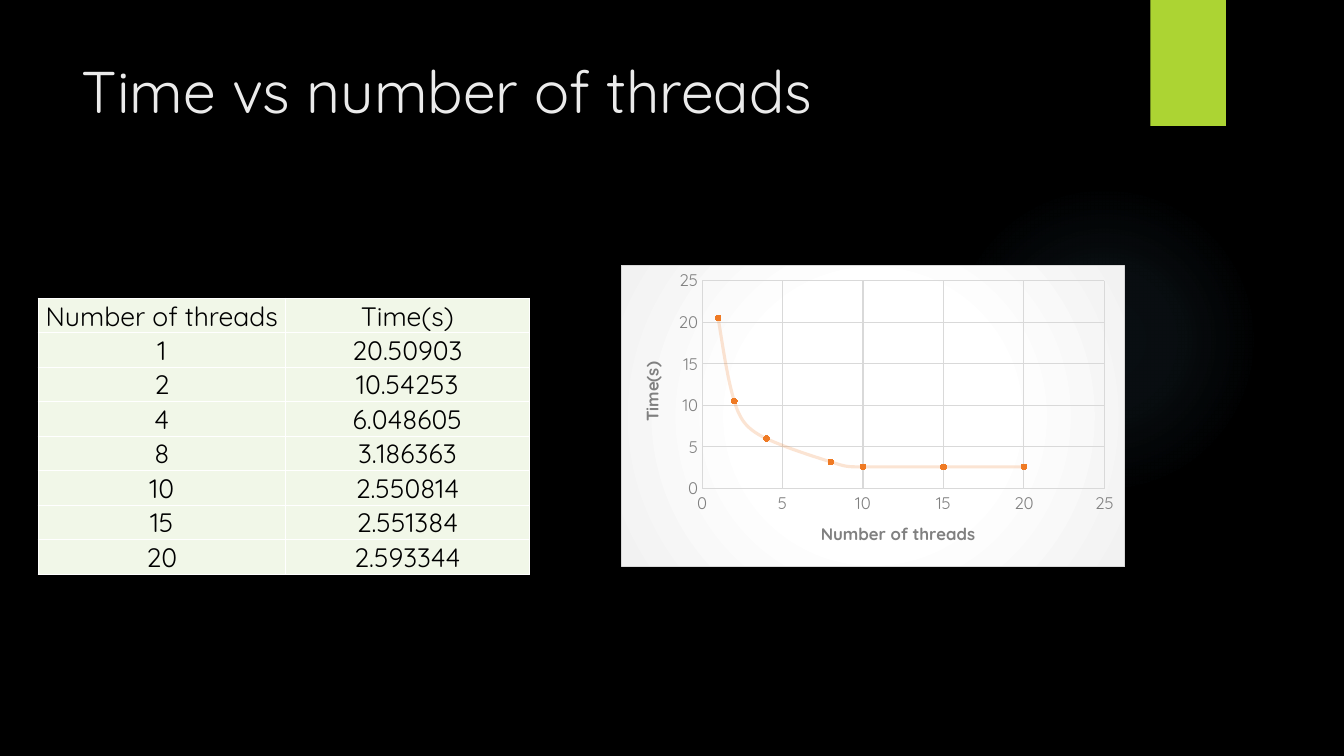
from lxml import etree
from pptx import Presentation
from pptx.chart.data import XyChartData
from pptx.dml.color import RGBColor
from pptx.enum.chart import XL_CHART_TYPE as CT, XL_MARKER_STYLE as MARKER, XL_TICK_MARK as TICK
from pptx.enum.shapes import MSO_SHAPE as SHAPE
from pptx.enum.text import MSO_ANCHOR as ANCHOR, PP_ALIGN as ALIGN
from pptx.oxml import parse_xml
from pptx.oxml.ns import nsdecls
from pptx.util import Inches, Pt

HEADERS = ("Number of threads", "Time(s)")
TIMINGS = [(1, 20.50903), (2, 10.54253), (4, 6.048605), (8, 3.186363),
           (10, 2.550814), (15, 2.551384), (20, 2.593344)]


def rgb(value):
    return RGBColor.from_string(value)


def radial(stops):
    gs = "".join(f'<a:gs pos="{pos * 1000}"><a:srgbClr val="{color}"><a:alpha val="{alpha * 1000}"/>'
                 "</a:srgbClr></a:gs>" for pos, color, alpha in stops)
    return parse_xml(f'<a:gradFill {nsdecls("a")} rotWithShape="1"><a:gsLst>{gs}</a:gsLst>'
                     '<a:path path="circle"><a:fillToRect l="50000" t="50000" r="50000" b="50000"/>'
                     "</a:path></a:gradFill>")


def place(parent, index, inner=False, **fractions):
    for old in parent.xpath("c:layout"):
        parent.remove(old)
    target = '<c:layoutTarget val="inner"/>' if inner else ""
    modes = '<c:xMode val="edge"/><c:yMode val="edge"/>'
    values = "".join(f'<c:{key} val="{value}"/>' for key, value in fractions.items())
    parent.insert(index, parse_xml(f'<c:layout {nsdecls("c")}><c:manualLayout>{target}{modes}{values}'
                                   "</c:manualLayout></c:layout>"))


class Deck:
    """Holds the slide and its style, and draws each kind of element."""

    font, accent, title_color = "Quicksand", "ACD433", "EBEBEB"
    cell_fill, cell_text, cell_border = "F1F7E8", "000000", "FFFFFF"
    grid, axis_text, series_color = "D9D9D9", "808080", "EF7A24"

    def __init__(self, prs):
        self.s = prs.slides.add_slide(prs.slide_layouts[5])
        self.s.background.fill.solid()
        self.s.background.fill.fore_color.rgb = rgb("000000")

    def style(self, font, size, color, bold=False):
        font.name, font.size, font.bold = self.font, Pt(size), bold
        font.color.rgb = rgb(color)

    def shape(self, kind, x, y, w, h, color=None, stops=None):
        sp = self.s.shapes.add_shape(kind, Inches(x), Inches(y), Inches(w), Inches(h))
        sp.shadow.inherit = False
        sp.line.fill.background()
        if stops:
            sp.fill.background()
            no_fill = sp.element.spPr.find("{*}noFill")
            sp.element.spPr.replace(no_fill, radial(stops))
        else:
            sp.fill.solid()
            sp.fill.fore_color.rgb = rgb(color)

    def title(self, text, x, y, w, h):
        sp = self.s.shapes.title
        sp.left, sp.top, sp.width, sp.height = Inches(x), Inches(y), Inches(w), Inches(h)
        tf = sp.text_frame
        tf.text, tf.vertical_anchor, tf.word_wrap = text, ANCHOR.TOP, True
        p = tf.paragraphs[0]
        p.alignment = ALIGN.LEFT
        self.style(p.font, 42, self.title_color)

    def table(self, rows, x, y, widths, height):
        table = self.s.shapes.add_table(len(rows), len(widths), Inches(x), Inches(y), Inches(sum(widths)),
                                        Inches(height)).table
        table.first_row = table.horz_banding = False
        for column, width in zip(table.columns, widths):
            column.width = Inches(width)
        for i, row in enumerate(rows):
            table.rows[i].height = Inches(height / len(rows))
            for j, value in enumerate(row):
                self.cell(table.cell(i, j), str(value))

    def cell(self, cell, text):
        cell.text, cell.vertical_anchor = text, ANCHOR.MIDDLE
        cell.margin_left = cell.margin_right = cell.margin_top = Inches(0.01)
        cell.margin_bottom = 0
        cell.fill.solid()
        cell.fill.fore_color.rgb = rgb(self.cell_fill)
        p = cell.text_frame.paragraphs[0]
        p.alignment = ALIGN.CENTER
        self.style(p.font, 19, self.cell_text)
        for i, side in enumerate("LRTB"):
            cell._tc.tcPr.insert(i, parse_xml(
                f'<a:ln{side} {nsdecls("a")} w="12700"><a:solidFill>'
                f'<a:srgbClr val="{self.cell_border}"/></a:solidFill></a:ln{side}>'))

    def axis(self, axis, title):
        axis.minimum_scale, axis.maximum_scale, axis.major_unit = 0, 25, 5
        axis.major_tick_mark = axis.minor_tick_mark = TICK.NONE
        axis.has_major_gridlines = True
        line = axis.major_gridlines.format.line
        line.color.rgb, line.width = rgb(self.grid), Pt(0.75)
        axis.format.line.fill.background()
        self.style(axis.tick_labels.font, 12, self.axis_text)
        axis.tick_labels.number_format = "General"
        axis.tick_labels.number_format_is_linked = False
        axis.axis_title.text_frame.text = title
        self.style(axis.axis_title.text_frame.paragraphs[0].font, 12, self.axis_text, True)

    def scatter(self, points, titles, x, y, w, h):
        data = XyChartData()
        series = data.add_series("Series 1")
        for threads, seconds in points:
            series.add_data_point(threads, round(seconds, 1))
        chart = self.s.shapes.add_chart(CT.XY_SCATTER_SMOOTH, Inches(x), Inches(y), Inches(w), Inches(h),
                                        data).chart
        chart.has_legend = chart.has_title = False
        self.style(chart.font, 10, "FFFFFF")
        for axis, title in zip((chart.category_axis, chart.value_axis), titles):
            self.axis(axis, title)
        plot = chart.plots[0]
        plot.vary_by_categories = False
        curve = plot.series[0]
        curve.format.line.color.rgb, curve.format.line.width = rgb(self.series_color), Pt(2.25)
        curve.marker.style, curve.marker.size = MARKER.CIRCLE, 4
        curve.marker.format.fill.solid()
        curve.marker.format.fill.fore_color.rgb = rgb(self.series_color)
        curve.marker.format.line.color.rgb = rgb(self.series_color)
        root = chart.element
        for smooth in root.xpath(".//c:ser/c:smooth"):
            smooth.getparent().remove(smooth)
        root.xpath(".//c:ser/c:yVal")[0].addnext(parse_xml(f'<c:smooth {nsdecls("c")} val="1"/>'))
        line_color = root.xpath(".//c:ser/c:spPr/a:ln/a:solidFill/a:srgbClr")[0]
        etree.SubElement(line_color, line_color.tag.replace("srgbClr", "alpha"), val="20000")
        place(root.xpath(".//c:plotArea")[0], 0, True, x=0.16, y=0.05, w=0.8, h=0.69)
        x_title, y_title = root.xpath(".//c:valAx/c:title")
        place(x_title, 1, x=0.39, y=0.84)
        place(y_title, 1, x=0.03, y=0.31)
        body = y_title.xpath(".//a:bodyPr")[0]
        body.set("rot", "-5400000")
        body.set("vert", "horz")
        frame = parse_xml(f'<c:spPr {nsdecls("c", "a")}><a:ln w="9525"><a:solidFill>'
                          f'<a:srgbClr val="{self.grid}"/></a:solidFill></a:ln></c:spPr>')
        frame.insert(0, radial([(0, "FFFFFF", 100), (43, "FFFFFF", 100), (100, "F2F2F2", 100)]))
        root.xpath("c:chart")[0].addnext(frame)


def main():
    prs = Presentation()
    prs.slide_width, prs.slide_height = Inches(13.33), Inches(7.5)
    deck = Deck(prs)
    deck.shape(SHAPE.OVAL, 9.41, 1.83, 3.08, 3.08,
               stops=[(0, "7AC4F0", 7), (36, "7AC4F0", 6), (69, "7AC4F0", 0)])
    deck.shape(SHAPE.RECTANGLE, 11.41, 0, 0.75, 1.25, deck.accent)
    deck.title("Time vs number of threads", 0.71, 0.49, 10.29, 1.53)
    deck.table([HEADERS, *TIMINGS], 0.38, 2.96, (2.45, 2.42), 2.74)
    deck.scatter(TIMINGS, HEADERS, 6.16, 2.63, 5, 3)
    prs.save("out.pptx")


if __name__ == "__main__":
    main()
